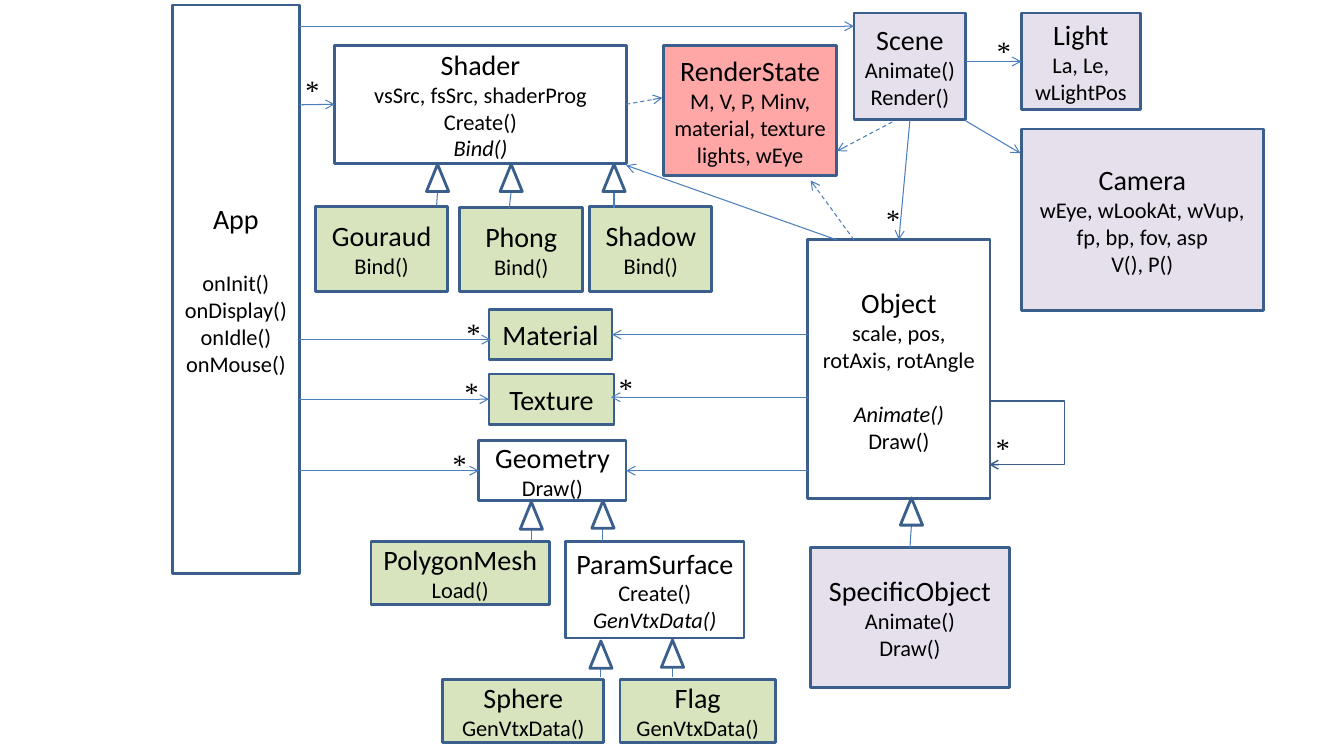
"""Draw the class diagram of a small 3D engine on one slide."""
from lxml.etree import SubElement
from pptx import Presentation
from pptx.dml.color import RGBColor
from pptx.enum.dml import MSO_LINE as Dash
from pptx.enum.shapes import MSO_CONNECTOR as Link, MSO_SHAPE as Form
from pptx.enum.text import MSO_ANCHOR as Anchor, MSO_AUTO_SIZE as Fit, PP_ALIGN as Align
from pptx.oxml.ns import qn
from pptx.util import Inches, Pt

EDGE, WIRE, BLACK, WHITE = "3A5F8C", "4B7EBC", "000000", "FFFFFF"
GREEN, LILAC, PINK = "D7E4BD", "E6E0EC", "FFA7A7"
TOP, LEFT, LOW, RIGHT = range(4)

CLASSES = [
    ("Shader", None, (3.32, 0.45, 2.89, 1.17), ["vsSrc, fsSrc, shaderProg", "Create()", "Bind()"]),
    ("Texture", GREEN, (4.85, 3.71, 1.24, 0.5), []),
    ("Scene", LILAC, (8.47, 0.13, 1.11, 1.06), ["Animate()", "Render()"]),
    ("Object", None, (8.01, 2.38, 1.81, 2.57), ["scale, pos, rotAxis, rotAngle", "Animate()", "Draw()"]),
    ("Geometry", None, (4.75, 4.37, 1.46, 0.6), ["Draw()"]),
    ("ParamSurface", None, (5.61, 5.37, 1.77, 0.96), ["Create()", "GenVtxData()"]),
    ("PolygonMesh", GREEN, (3.68, 5.37, 1.77, 0.63), ["Load()"]),
    ("Sphere", GREEN, (4.39, 6.74, 1.6, 0.63), ["GenVtxData()"]),
    ("Flag", GREEN, (6.15, 6.74, 1.54, 0.63), ["GenVtxData()"]),
    ("RenderState", PINK, (6.58, 0.45, 1.72, 1.29), ["M, V, P, Minv,", "material, texture", "lights, wEye"]),
    ("Phong", GREEN, (4.56, 2.06, 1.22, 0.83), ["Bind()"]),
    ("Gouraud", GREEN, (3.13, 2.05, 1.31, 0.84), ["Bind()"]),
    ("Light", LILAC, (10.13, 0.13, 1.18, 0.96), ["La, Le,", "wLightPos"]),
    ("Camera", LILAC, (10.13, 1.28, 2.4, 1.8), ["wEye, wLookAt, wVup,", "fp, bp, fov, asp", "V(), P()"]),
    ("Material", GREEN, (4.85, 3.07, 1.22, 0.5), []),
    ("Shadow", GREEN, (5.85, 2.05, 1.21, 0.84), ["Bind()"]),
    ("SpecificObject", LILAC, (8.04, 5.43, 1.97, 1.39), ["Animate()", "Draw()"]),
    ("App", WHITE, (1.71, 0.05, 1.26, 5.64), ["onInit()", "onDisplay()", "onIdle()", "onMouse()"]),
]
ITALIC = {("Shader", "Bind()"), ("Object", "Animate()"), ("ParamSurface", "GenVtxData()")}
GAPS = {("App", "onInit()"): 24.4, ("Object", "Animate()"): 19.5}

ARROWS = [
    ((2.97, 0.26), (8.47, 0.26)),
    ((2.97, 1.04), ("Shader", LEFT)),
    ((2.97, 3.37), (4.87, 3.37)),
    ((2.97, 3.96), ("Texture", LEFT)),
    ((2.97, 4.67), ("Geometry", LEFT)),
    ((8.01, 3.32), ("Material", RIGHT)),
    ((8.01, 3.94), (6.06, 3.94)),
    ((8.01, 4.67), ("Geometry", RIGHT)),
    ((8.3, 2.38), (6.21, 1.64)),
    (("Scene", LOW), ("Object", TOP)),
    ((9.58, 1.2), (10.12, 1.52)),
    ((9.58, 0.61), ("Light", LEFT)),
]
USES = [
    ((8.85, 1.21), (8.3, 1.5)),
    (("Shader", RIGHT), (6.57, 0.97)),
    ((8.47, 2.38), (8.04, 1.79)),
]
HEAD = (0.22, 0.27)
PARENTS = [
    (5.16, 4.98, None, (5.27, 5.36)),
    (5.87, 4.97, None, (5.98, 5.37)),
    (5.98, 1.63, None, (6.09, 2.06)),
    (8.93, 4.94, None, ("SpecificObject", TOP)),
    (4.23, 1.63, WHITE, (4.33, 2.04)),
    (4.96, 1.63, WHITE, (5.05, 2.07)),
    (5.85, 6.36, WHITE, (5.96, 6.72)),
    (6.56, 6.35, WHITE, (6.67, 6.72)),
]
MANY = [(8.69, 1.95), (6.04, 3.63), (4.39, 4.38), (9.79, 0.28), (4.51, 3.67),
        (4.53, 3.08), (2.93, 0.67), (9.78, 4.22)]
LOOP = [(9.82, 3.98), (10.56, 3.98), (10.56, 4.61), (9.81, 4.61)]

deck = Presentation()
deck.slide_width, deck.slide_height = Inches(13.33), Inches(7.5)
shapes = deck.slides.add_slide(deck.slide_layouts[6]).shapes
boxes = {}


def hue(code):
    return RGBColor.from_string(code)


def inch(*sizes):
    return [Inches(size) for size in sizes]


def paint(shape, fill, width=2):
    shape.shadow.inherit = False
    if fill:
        shape.fill.solid()
        shape.fill.fore_color.rgb = hue(fill)
    else:
        shape.fill.background()
    shape.line.color.rgb = hue(EDGE)
    shape.line.width = Pt(width)


def write(para, text, **style):
    run = para.add_run()
    run.text = text
    for key, value in style.items():
        setattr(run.font, key, value)
    run.font.color.rgb = hue(BLACK)


def tip(shape):
    SubElement(shape._element.spPr.find(qn("a:ln")), qn("a:tailEnd"), type="arrow")


def wire(start, end, arrow=True, dash=None):
    spots = [(0, 0) if spot[0] in boxes else spot for spot in (start, end)]
    link = shapes.add_connector(Link.STRAIGHT, *inch(*spots[0], *spots[1]))
    for spot, join in ((start, link.begin_connect), (end, link.end_connect)):
        if spot[0] in boxes:
            join(boxes[spot[0]], spot[1])
    link.line.color.rgb = hue(WIRE)
    link.line.width = Pt(0.75)
    if dash:
        link.line.dash_style = dash
    if arrow:
        tip(link)
    SubElement(link._element.spPr, qn("a:effectLst"))


def draw_class(name, fill, place, lines):
    box = boxes[name] = shapes.add_shape(Form.RECTANGLE, *inch(*place))
    paint(box, fill)
    frame = box.text_frame
    frame.word_wrap = True
    frame.vertical_anchor = Anchor.MIDDLE
    for row, text in enumerate([name, *lines]):
        para = frame.add_paragraph() if row else frame.paragraphs[0]
        para.alignment = Align.CENTER
        if (name, text) in GAPS:
            para.space_before = Pt(GAPS[name, text])
        write(para, text, name="Calibri", size=Pt(16 if row else 20),
              italic=(name, text) in ITALIC)


for item in CLASSES:
    draw_class(*item)
for start, end in ARROWS:
    wire(start, end)
for start, end in USES:
    wire(start, end, dash=Dash.DASH)
for left, top, fill, child in PARENTS:
    wire((left + HEAD[0] / 2, top + HEAD[1]), child, arrow=False)
    paint(shapes.add_shape(Form.ISOSCELES_TRIANGLE, *inch(left, top, *HEAD)), fill)

first, *rest = [inch(*spot) for spot in LOOP]
pen = shapes.build_freeform(*first)
pen.add_line_segments(rest, close=False)
loop = pen.convert_to_shape()
paint(loop, None, 1)
tip(loop)

for left, top in MANY:
    frame = shapes.add_textbox(*inch(left, top, 0.34, 0.44)).text_frame
    frame.word_wrap = False
    frame.auto_size = Fit.SHAPE_TO_FIT_TEXT
    write(frame.paragraphs[0], "*", name="Times New Roman", size=Pt(20))

deck.save("out.pptx")
